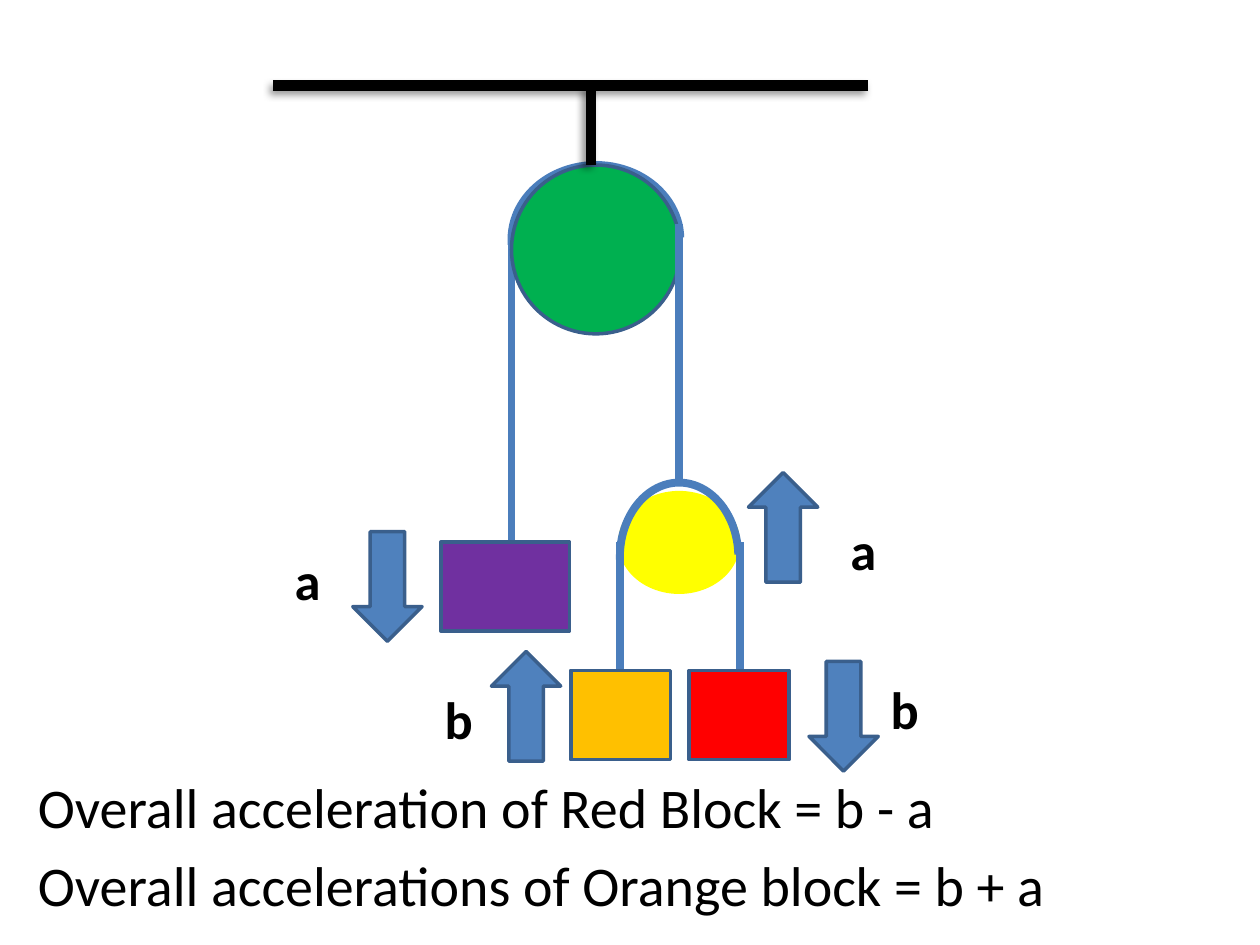
from dataclasses import dataclass

from pptx import Presentation
from pptx import util as u
from pptx.dml.color import RGBColor
from pptx.enum import shapes, text
from pptx.oxml import parse_xml
from pptx.oxml.ns import nsdecls

# The slide is a grid of 100 columns by 75 rows
COLUMNS, ROWS = 100, 75
CELL = u.Inches(10) // COLUMNS


@dataclass(frozen=True)
class Theme:
    font: str = "Calibri"
    ink: str = "000000"
    outline: str = "3A5F8C"
    rope: str = "4B7EBC"
    arrow: str = "4F81BD"
    green: str = "00B050"
    yellow: str = "FFFF00"
    purple: str = "7030A0"
    orange: str = "FFC000"
    red: str = "FF0000"
    outline_width: float = 2
    rope_width: float = 4.5
    beam_width: float = 6
    label_size: int = 30
    body_size: int = 32


THEME = Theme()
SHADOW = (
    '<a:outerShdw blurRad="50800" dist="38100" dir="8100000" algn="tr" rotWithShape="0">'
    '<a:srgbClr val="000000"><a:alpha val="40000"/></a:srgbClr></a:outerShdw>'
)


def grid(*cells):
    return [round(cell * CELL) for cell in cells]


def apply_format(target, values):
    for name, value in values.items():
        setattr(target, name, value)


def format_line(line, color, width):
    line.color.rgb = RGBColor.from_string(color)
    line.width = u.Pt(width)


def format_run(run, size, bold=False):
    apply_format(run.font, {"name": THEME.font, "size": u.Pt(size), "bold": bold})
    run.font.color.rgb = RGBColor.from_string(THEME.ink)


def add_solid(slide, kind, box, fill, outline=THEME.outline, rotation=0):
    shape = slide.shapes.add_shape(kind, *grid(*box))
    apply_format(shape, {"rotation": rotation})
    shape.shadow.inherit = False
    shape.fill.solid()
    shape.fill.fore_color.rgb = RGBColor.from_string(fill)
    format_line(shape.line, outline, THEME.outline_width)


def add_block(slide, box, fill):
    add_solid(slide, shapes.MSO_SHAPE.RECTANGLE, box, fill)


def add_pulley(slide, box, fill, outline):
    add_solid(slide, shapes.MSO_SHAPE.OVAL, box, fill, outline)


def add_rope_arc(slide, box, angles, rotation=0):
    shape = slide.shapes.add_shape(shapes.MSO_SHAPE.ARC, *grid(*box))
    shape.rotation = rotation
    shape.shadow.inherit = False
    shape.fill.background()
    format_line(shape.line, THEME.rope, THEME.rope_width)
    for index, angle in enumerate(angles):
        shape.adjustments[index] = angle * 0.6  # 60000ths of a degree, per 100000


def add_line(slide, start, end, color, width, effect=""):
    line = slide.shapes.add_connector(
        shapes.MSO_CONNECTOR.STRAIGHT, *grid(*start, *end))
    format_line(line.line, color, width)
    line._element.spPr.append(
        parse_xml(f"<a:effectLst {nsdecls('a')}>{effect}</a:effectLst>"))


def add_rope(slide, column, bottom, top):
    add_line(slide, (column, bottom), (column, top), THEME.rope, THEME.rope_width)


def add_beam(slide, start, end):
    add_line(slide, start, end, THEME.ink, THEME.beam_width, SHADOW)


def add_motion(slide, letter, arrow_at, label_at, upward):
    """An acceleration arrow with its letter."""
    add_solid(slide, shapes.MSO_SHAPE.DOWN_ARROW, (*arrow_at, 5.5, 8.7),
              THEME.arrow, rotation=180 if upward else 0)
    frame = slide.shapes.add_textbox(*grid(*label_at, 7.1, 6.1)).text_frame
    apply_format(frame, {"word_wrap": True,
                         "auto_size": text.MSO_AUTO_SIZE.SHAPE_TO_FIT_TEXT})
    run = frame.paragraphs[0].add_run()
    run.text = letter
    format_run(run, THEME.label_size, bold=True)


def fill_body(slide, box, lines):
    body = slide.placeholders[1]
    apply_format(body, dict(zip(("left", "top", "width", "height"), grid(*box))))
    body.text_frame.text = "\n".join(lines)
    for paragraph in body.text_frame.paragraphs:
        properties = paragraph._p.get_or_add_pPr()
        properties.append(parse_xml(f"<a:buNone {nsdecls('a')}/>"))
        format_run(paragraph.runs[0], THEME.body_size)
    slide.shapes._spTree.append(body._element)  # bring to the front


def main():
    presentation = Presentation()
    presentation.slide_width, presentation.slide_height = grid(COLUMNS, ROWS)
    slide = presentation.slides.add_slide(presentation.slide_layouts[1])
    title = slide.shapes.title._element
    title.getparent().remove(title)

    # Fixed pulley, hung from the ceiling
    left, right, small_left, small_right = 40.6, 53.9, 49.2, 58.7
    block_top, load_top = 53.2, 43
    add_rope_arc(slide, (left, 13.1, 13.4, 11.8), (176.42, 358.83))
    add_rope(slide, left, load_top, 19.4)
    add_pulley(slide, (left, 13.1, 13.4, 13.4), THEME.green, THEME.outline)
    add_beam(slide, (21.7, 6.8), (68.9, 6.8))
    add_beam(slide, (46.9, 6.8), (46.9, 13.1))

    # Moving pulley and its ropes
    add_pulley(slide, (small_left, 39.1, 9.4, 7.9), THEME.yellow, THEME.yellow)
    for column in (small_left, small_right):
        add_rope(slide, column, block_top, load_top)
    add_rope_arc(slide, (small_left, 38.3, 9.4, 11.8), (355.96, 177.55), 180)
    add_rope(slide, right, 38.3, 17.8)

    # Blocks
    add_block(slide, (35, load_top, 10.2, 7.1), THEME.purple)
    for column, color in ((45.3, THEME.orange), (54.7, THEME.red)):
        add_block(slide, (column, block_top, 7.9, 7.1), color)

    # Accelerations
    for letter, arrow_at, label_at, upward in (
        ("a", (28, 42.2), (22.4, 43), False),
        ("a", (59.4, 37.5), (66.5, 40.6), True),
        ("b", (64.2, 52.5), (69.7, 53.2), False),
        ("b", (39, 51.7), (34.3, 54), True),
    ):
        add_motion(slide, letter, arrow_at, label_at, upward)

    # Conclusions
    fill_body(slide, (2, 60.8, 90, 14.2), (
        "Overall acceleration of Red Block = b - a",
        "Overall accelerations of Orange block = b + a",
    ))
    presentation.save("out.pptx")


if __name__ == "__main__":
    main()
